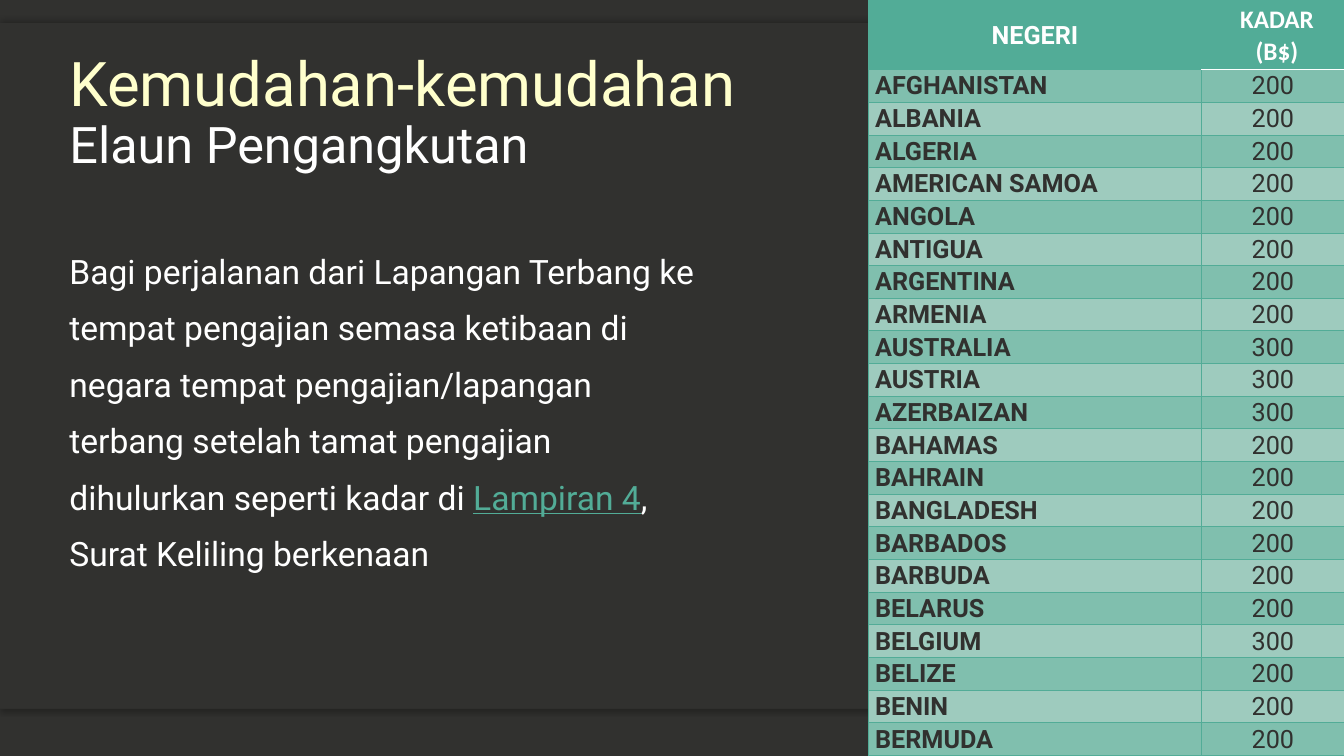
from lxml.etree import SubElement
from pptx import Presentation
from pptx.dml.color import RGBColor
from pptx.enum.shapes import MSO_SHAPE
from pptx.enum.text import MSO_ANCHOR, PP_ALIGN
from pptx.oxml.ns import qn
from pptx.util import Inches, Pt

COLORS = {
    "background": "31312F", "title": "FFFFCC", "white": "FFFFFF", "accent": "52AC97",
    "dark_band": "80BFAE", "light_band": "9ECBBE", "shadow": "000000",
}
TITLE_LINES = [
    ("Kemudahan-kemudahan", 44, "title"),
    ("Elaun Pengangkutan", 36, "white"),
]
BODY_RUNS = [
    ("Bagi perjalanan dari Lapangan Terbang ke tempat pengajian semasa ketibaan di "
     "negara tempat pengajian/lapangan terbang setelah tamat pengajian "
     "dihulurkan seperti kadar di ", "white"),
    ("Lampiran 4", "accent"),
    (", Surat Keliling berkenaan", "white"),
]
HEADERS = [("NEGERI", "Roboto"), ("KADAR (B$)", "Calibri")]
RATES = [
    ("AFGHANISTAN", 200), ("ALBANIA", 200), ("ALGERIA", 200), ("AMERICAN SAMOA", 200),
    ("ANGOLA", 200), ("ANTIGUA", 200), ("ARGENTINA", 200), ("ARMENIA", 200),
    ("AUSTRALIA", 300), ("AUSTRIA", 300), ("AZERBAIZAN", 300), ("BAHAMAS", 200),
    ("BAHRAIN", 200), ("BANGLADESH", 200), ("BARBADOS", 200), ("BARBUDA", 200),
    ("BELARUS", 200), ("BELGIUM", 300), ("BELIZE", 200), ("BENIN", 200), ("BERMUDA", 200),
]
WIDTH, HEIGHT = 13.33, 7.5
PANEL_TOP, PANEL_HEIGHT, EDGE_HEIGHT = 0.23, 6.8, 0.49
TEXT_LEFT = 0.59
COLUMN_WIDTHS = [3.31, 1.41]
HEADER_HEIGHT = 0.69


def rgb(name):
    return RGBColor.from_string(COLORS[name])


def style_run(run, size, color, font="Roboto", bold=False):
    run.font.name, run.font.size, run.font.bold = font, Pt(size), bold
    run.font.color.rgb = rgb(color)


def add_band(slide, top, height):
    band = slide.shapes.add_shape(MSO_SHAPE.RECTANGLE, 0, Inches(top), Inches(WIDTH), Inches(height))
    band.shadow.inherit = False
    band.fill.solid()
    band.fill.fore_color.rgb = rgb("background")
    band.line.fill.background()
    return band


def add_shadow(shape, degrees):
    effects = shape._element.spPr.find(qn("a:effectLst"))
    shadow = SubElement(effects, qn("a:outerShdw"), blurRad=str(Pt(4)), dist=str(Pt(2)),
                        dir=str(degrees * 60000), rotWithShape="0")
    color = SubElement(shadow, qn("a:srgbClr"), val=COLORS["shadow"])
    SubElement(color, qn("a:alpha"), val="25000")


def add_text_frame(slide, top, width, height, anchor):
    box = slide.shapes.add_textbox(Inches(TEXT_LEFT), Inches(top), Inches(width), Inches(height))
    frame = box.text_frame
    frame.word_wrap = True
    frame.vertical_anchor = anchor
    return frame


def set_borders(cell, white_sides=()):
    properties = cell._tc.get_or_add_tcPr()
    for side in "LRTB":
        white = side in white_sides
        line = SubElement(properties, qn(f"a:ln{side}"), w=str(Pt(1 if white else 0.5)))
        fill = SubElement(line, qn("a:solidFill"))
        SubElement(fill, qn("a:srgbClr"), val=COLORS["white" if white else "accent"])


def fill_cell(cell, text, fill, color, font, bold, align, white_sides):
    set_borders(cell, white_sides)
    cell.fill.solid()
    cell.fill.fore_color.rgb = rgb(fill)
    cell.margin_left = cell.margin_right = Inches(0.07)
    cell.margin_top = cell.margin_bottom = 0
    cell.text_frame.text = text
    paragraph = cell.text_frame.paragraphs[0]
    paragraph.alignment = align
    paragraph.line_spacing = 1.07
    style_run(paragraph.runs[0], 18, color, font, bold)


def add_rate_table(slide):
    table_width = sum(COLUMN_WIDTHS)
    table = slide.shapes.add_table(
        len(RATES) + 1, len(COLUMN_WIDTHS), Inches(WIDTH - table_width), 0,
        Inches(table_width), Inches(HEIGHT)).table
    table.first_row = table.horz_banding = False
    for column, width in zip(table.columns, COLUMN_WIDTHS):
        column.width = Inches(width)
    for row in table.rows:
        row.height = Inches((HEIGHT - HEADER_HEIGHT) / len(RATES))
    table.rows[0].height = Inches(HEADER_HEIGHT)

    for column, (text, font) in enumerate(HEADERS):
        cell = table.cell(0, column)
        fill_cell(cell, text, "accent", "white", font, True, PP_ALIGN.CENTER, "B" if column else "")
        cell.vertical_anchor = MSO_ANCHOR.MIDDLE
    table.cell(0, 1).text_frame.paragraphs[0]._p.get_or_add_pPr().set("marL", str(Inches(0.08)))

    for row, (country, rate) in enumerate(RATES, start=1):
        band = "dark_band" if row % 2 else "light_band"
        fill_cell(table.cell(row, 0), country, band, "background", "Roboto", True, PP_ALIGN.LEFT, "")
        fill_cell(table.cell(row, 1), str(rate), band, "background", "Roboto", False,
                  PP_ALIGN.CENTER, "T" if row == 1 else "")


def main():
    presentation = Presentation()
    presentation.slide_width, presentation.slide_height = Inches(WIDTH), Inches(HEIGHT)
    slide = presentation.slides.add_slide(presentation.slide_layouts[6])
    slide.background.fill.solid()
    slide.background.fill.fore_color.rgb = rgb("background")

    add_shadow(add_band(slide, PANEL_TOP + PANEL_HEIGHT - EDGE_HEIGHT, EDGE_HEIGHT), 90)
    add_shadow(add_band(slide, PANEL_TOP, EDGE_HEIGHT), 270)
    add_band(slide, PANEL_TOP, PANEL_HEIGHT)

    title = add_text_frame(slide, 0.4, 10.5, 1.38, MSO_ANCHOR.BOTTOM).paragraphs[0]
    title.line_spacing = 0.9
    for index, (text, size, color) in enumerate(TITLE_LINES):
        if index:
            title.add_line_break()
        run = title.add_run()
        run.text = text
        style_run(run, size, color)

    body = add_text_frame(slide, 2.28, 6.59, 3.7, MSO_ANCHOR.TOP).paragraphs[0]
    body.line_spacing = 1.4
    for text, color in BODY_RUNS:
        run = body.add_run()
        run.text = text
        style_run(run, 24, color)
        run.font.underline = color == "accent"

    add_rate_table(slide)
    presentation.save("out.pptx")


if __name__ == "__main__":
    main()
